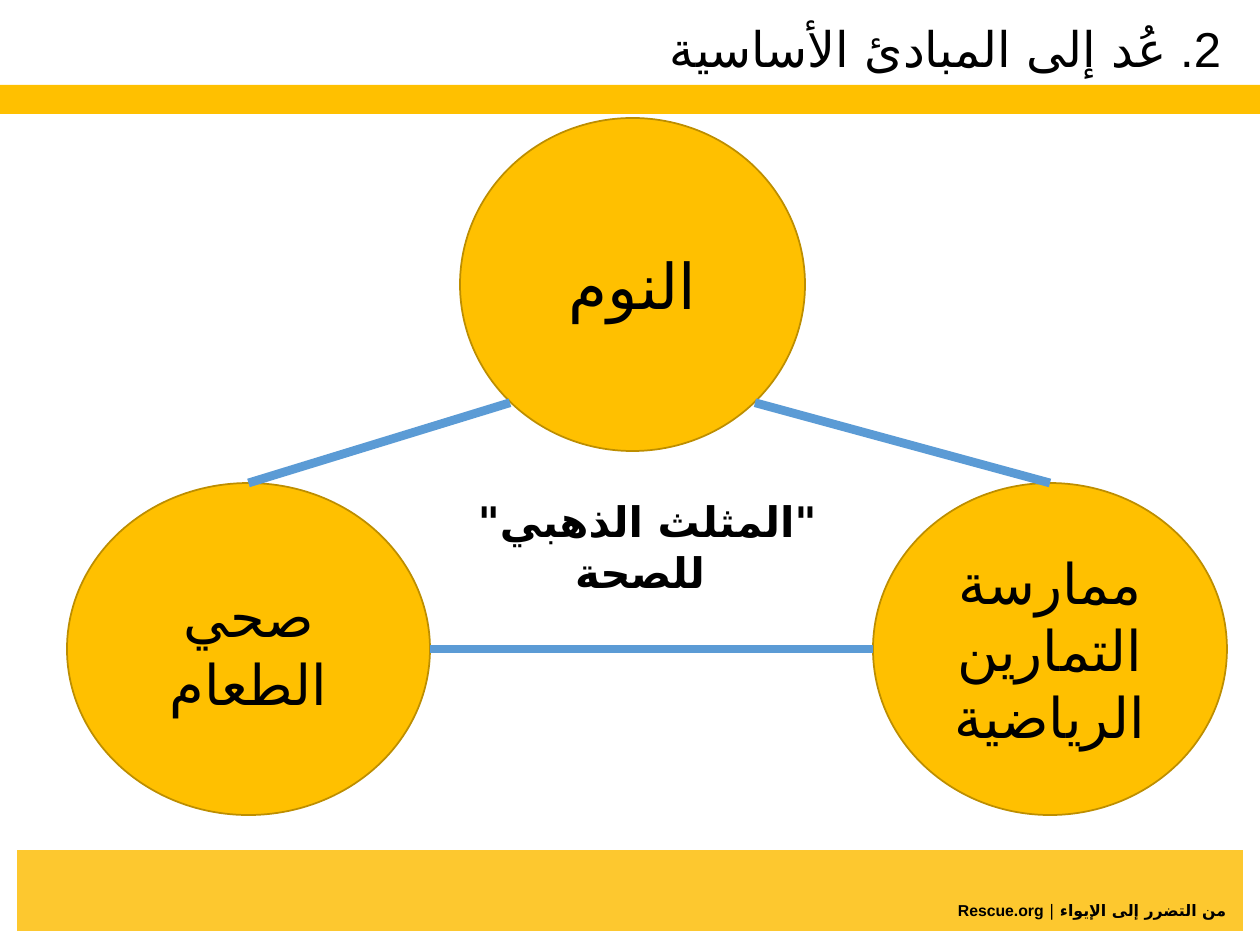
from lxml import etree
from pptx import Presentation
from pptx.dml.color import RGBColor
from pptx.enum.shapes import MSO_CONNECTOR, MSO_SHAPE
from pptx.enum.text import MSO_ANCHOR, PP_ALIGN
from pptx.oxml.ns import qn
from pptx.util import Pt

RECTANGLE, ELLIPSE = MSO_SHAPE.RECTANGLE, MSO_SHAPE.OVAL
STRAIGHT = MSO_CONNECTOR.STRAIGHT
TOP, MIDDLE, BOTTOM = MSO_ANCHOR.TOP, MSO_ANCHOR.MIDDLE, MSO_ANCHOR.BOTTOM
RIGHT, CENTER = PP_ALIGN.RIGHT, PP_ALIGN.CENTER
EMU_PER_PX = 914400 / 126

GOLD, GOLD_EDGE, BLUE, BLACK = "FFC000", "BD8E00", "5B9BD5", "000000"
ARABIC_FONT = "DejaVu Sans"

# Content: boxes are left, top, width, height in px
BANDS = [((17, 850, 1226, 81), "FDC82F"), ((0, 85, 1260, 29), GOLD)]

# Paragraphs are lists of (text, bold) runs
TEXTS = [
    {"box": (816, 901, 410, 19), "inset": (0, 0), "anchor": BOTTOM, "align": RIGHT,
     "font": {"name": "Arial", "size": Pt(9)},
     "paragraphs": [[("من التضرر إلى الإيواء ", True), ("|", False), (" Rescue.org", True)]]},
    {"box": (147, 19, 1087, 84), "align": RIGHT, "spacing": 0.9,
     "font": {"name": "Arial", "size": Pt(28)},
     "paragraphs": [[("2. ", False), ("عُد إلى المبادئ الأساسية", False)]]},
    {"box": (364, 490, 552, 115), "align": CENTER,
     "font": {"name": "Calibri", "size": Pt(24)},
     "paragraphs": [[('"المثلث الذهبي" ', True)], [("للصحة", True)]]},
]

CIRCLES = {
    "sleep": ((460, 118, 345, 333), 36, ["النوم"]),
    "exercise": ((873, 483, 354, 332), 32, ["ممارسة التمارين الرياضية"]),
    "food": ((67, 483, 363, 332), 32, ["صحي", "الطعام"]),
}

# Circle and direction from its centre, for both ends
LINKS = [
    (("food", (1, 0)), ("exercise", (-1, 0))),
    (("sleep", (0.71, 0.71)), ("exercise", (0, -1))),
    (("sleep", (-0.71, 0.71)), ("food", (0, -1))),
]


def px(*values):
    return [round(value * EMU_PER_PX) for value in values]


def color(hex_string):
    return RGBColor.from_string(hex_string)


def write(shape, paragraphs, font, align, anchor=TOP, inset=(13, 6), spacing=None):
    frame = shape.text_frame
    horizontal, vertical = px(*inset)
    settings = {"word_wrap": True, "vertical_anchor": anchor,
                "margin_left": horizontal, "margin_right": horizontal,
                "margin_top": vertical, "margin_bottom": vertical}
    for name, value in settings.items():
        setattr(frame, name, value)
    for index, runs in enumerate(paragraphs):
        paragraph = frame.add_paragraph() if index else frame.paragraphs[0]
        paragraph.alignment = align
        paragraph.line_spacing = spacing
        paragraph._p.get_or_add_pPr().set("rtl", "1")
        for text, bold in runs:
            run = paragraph.add_run()
            run.text = text
            for name, value in {**font, "bold": bold}.items():
                setattr(run.font, name, value)
            run.font.color.rgb = color(BLACK)
            # Arabic letters take the complex-script typeface, numbers keep the Latin one
            script = etree.SubElement(run._r.get_or_add_rPr(), qn("a:cs"))
            script.set("typeface", font["name"] if text[0].isdigit() else ARABIC_FONT)


def add_filled(slide, kind, box, fill, edge=None):
    shape = slide.shapes.add_shape(kind, *px(*box))
    shape.shadow.inherit = False
    shape.fill.solid()
    shape.fill.fore_color.rgb = color(fill)
    if edge:
        shape.line.color.rgb = color(edge)
        shape.line.width = Pt(1)
    else:
        shape.line.fill.background()
    return shape


def rim_point(name, direction):
    left, top, width, height = CIRCLES[name][0]
    x, y = direction
    return left + width / 2 * (1 + x), top + height / 2 * (1 + y)


def main():
    presentation = Presentation()
    presentation.slide_width, presentation.slide_height = px(1260, 945)
    slide = presentation.slides.add_slide(presentation.slide_layouts[6])

    # Gold bands
    for box, fill in BANDS:
        add_filled(slide, RECTANGLE, box, fill)

    # Corners of the triangle
    for box, size, lines in CIRCLES.values():
        circle = add_filled(slide, ELLIPSE, box, GOLD, GOLD_EDGE)
        write(circle, [[(line, False)] for line in lines],
              {"name": "Calibri", "size": Pt(size)}, CENTER, MIDDLE)

    # Sides of the triangle
    for start, end in LINKS:
        link = slide.shapes.add_connector(STRAIGHT, *px(*rim_point(*start), *rim_point(*end)))
        link.line.color.rgb = color(BLUE)
        link.line.width = Pt(5)
        etree.SubElement(link._element.spPr, qn("a:effectLst"))

    # Footer, title and centre caption
    for text in TEXTS:
        options = dict(text)
        write(slide.shapes.add_textbox(*px(*options.pop("box"))), **options)

    presentation.save("out.pptx")


if __name__ == "__main__":
    main()
